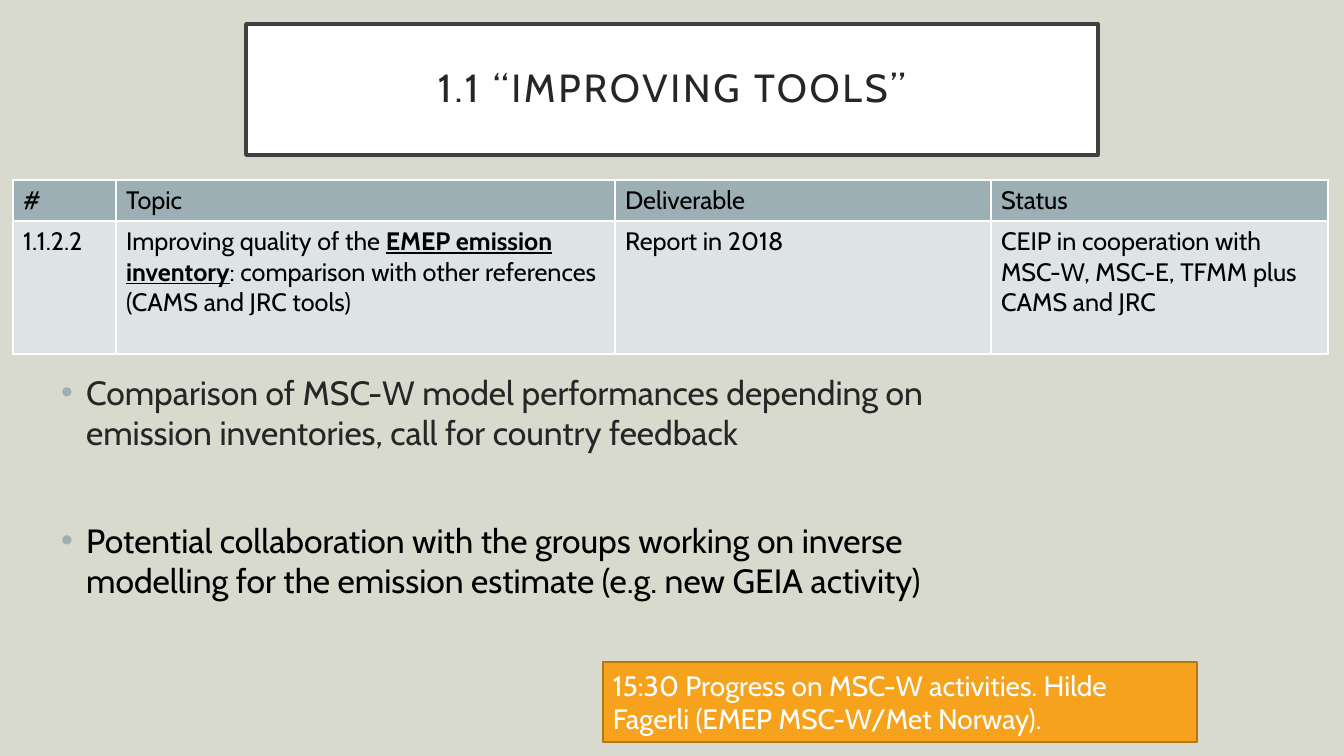
from lxml import etree
from pptx import Presentation
from pptx.dml.color import RGBColor
from pptx.enum.shapes import MSO_SHAPE
from pptx.enum.text import MSO_ANCHOR, MSO_AUTO_SIZE, PP_ALIGN
from pptx.oxml.ns import qn
from pptx.util import Pt

RECTANGLE = MSO_SHAPE.RECTANGLE
MIDDLE = MSO_ANCHOR.MIDDLE
NO_AUTOFIT = MSO_AUTO_SIZE.NONE
LEFT, CENTER = PP_ALIGN.LEFT, PP_ALIGN.CENTER

PX = 914400 / 100.8
FONT = "Cabin"
SAGE = RGBColor(0xD7, 0xDA, 0xCD)
WHITE = RGBColor(0xFF, 0xFF, 0xFF)
BLACK = RGBColor(0x00, 0x00, 0x00)
CHARCOAL = RGBColor(0x26, 0x26, 0x26)
FRAME_GREY = RGBColor(0x40, 0x40, 0x40)
HEADER_BLUE = RGBColor(0x9B, 0xAF, 0xB5)
ROW_BLUE = RGBColor(0xDE, 0xE3, 0xE5)
ORANGE = RGBColor(0xF6, 0xA2, 0x1D)
DARK_ORANGE = RGBColor(0xB6, 0x78, 0x15)


def px(*lengths):
    return [round(length * PX) for length in lengths]


def style_runs(para, size, color):
    for span in para.runs:
        span.font.name = FONT
        span.font.size = Pt(size)
        span.font.color.rgb = color


deck = Presentation()
deck.slide_width, deck.slide_height = px(1344, 756)
page = deck.slides.add_slide(deck.slide_layouts[1])
page.background.fill.solid()
page.background.fill.fore_color.rgb = SAGE

# Title in a framed box
title = page.shapes.title
title.left, title.top, title.width, title.height = px(246, 24, 852, 131)
title.fill.solid()
title.fill.fore_color.rgb = WHITE
title.line.color.rgb = FRAME_GREY
title.line.width = Pt(2.5)
frame = title.text_frame
frame.text = "1.1 “IMPROVING TOOLS”"
frame.auto_size = NO_AUTOFIT
frame.vertical_anchor = MIDDLE
para = frame.paragraphs[0]
para.alignment = CENTER
para.line_spacing = 0.9
style_runs(para, 28, CHARCOAL)
para.runs[0].font._element.set("spc", "200")

# Deliverables table: each cell is a list of (text, emphasised) spans
ROWS = [
    [[("#", False)], [("Topic", False)], [("Deliverable", False)], [("Status", False)]],
    [
        [("1.1.2.2", False)],
        [
            ("Improving quality of the ", False),
            ("EMEP emission inventory", True),
            (": comparison with other references (CAMS and JRC tools)", False),
        ],
        [("Report in 2018", False)],
        [("CEIP in cooperation with MSC-W, MSC-E, TFMM plus CAMS and JRC", False)],
    ],
]
COLUMN_WIDTHS = px(103, 499, 376, 337)
ROW_HEIGHTS = px(41, 133)
table = page.shapes.add_table(2, 4, *px(13, 180, 1315, 174)).table
table.first_row = False
table.horz_banding = False
for column, width in zip(table.columns, COLUMN_WIDTHS):
    column.width = width
for row, height, contents, fill in zip(table.rows, ROW_HEIGHTS, ROWS, (HEADER_BLUE, ROW_BLUE)):
    row.height = height
    for cell, spans in zip(row.cells, contents):
        para = cell.text_frame.paragraphs[0]
        for text, emphasised in spans:
            span = para.add_run()
            span.text = text
            span.font.bold = emphasised
            span.font.underline = emphasised
        style_runs(para, 18, BLACK)
        properties = cell._tc.get_or_add_tcPr()
        for side in ("a:lnL", "a:lnR", "a:lnT", "a:lnB"):
            border = etree.SubElement(properties, qn(side), w=str(Pt(1)))
            paint = etree.SubElement(border, qn("a:solidFill"))
            etree.SubElement(paint, qn("a:srgbClr"), val=str(WHITE))
        cell.fill.solid()
        cell.fill.fore_color.rgb = fill

# Bulleted notes
NOTES = [
    ("Comparison of MSC-W model performances depending on emission inventories, "
     "call for country feedback", CHARCOAL, 0),
    ("Potential collaboration with the groups working on inverse modelling for the "
     "emission estimate (e.g. new GEIA activity)", BLACK, 48),
]
body = page.placeholders[1]
body.left, body.top, body.width, body.height = px(51, 367, 898, 280)
frame = body.text_frame
frame.text = "\n".join(text for text, color, gap in NOTES)
frame.auto_size = NO_AUTOFIT
indent = px(25)[0]
for para, (text, color, gap) in zip(frame.paragraphs, NOTES):
    para.space_before = Pt(gap)
    style_runs(para, 24, color)
    properties = para._p.get_or_add_pPr()
    properties.set("marL", str(indent))
    properties.set("indent", str(-indent))
    bullet_color = etree.SubElement(properties, qn("a:buClr"))
    etree.SubElement(bullet_color, qn("a:srgbClr"), val=str(HEADER_BLUE))
    etree.SubElement(properties, qn("a:buFont"), typeface="Arial")
    etree.SubElement(properties, qn("a:buChar"), char="•")

# Agenda callout
callout = page.shapes.add_shape(RECTANGLE, *px(603, 662, 594, 80))
callout.shadow.inherit = False
callout.fill.solid()
callout.fill.fore_color.rgb = ORANGE
callout.line.color.rgb = DARK_ORANGE
callout.line.width = Pt(1)
frame = callout.text_frame
frame.text = "15:30 Progress on MSC-W activities. Hilde Fagerli (EMEP MSC-W/Met Norway)."
frame.word_wrap = True
frame.vertical_anchor = MIDDLE
frame.paragraphs[0].alignment = LEFT
style_runs(frame.paragraphs[0], 20, WHITE)

deck.save("out.pptx")
